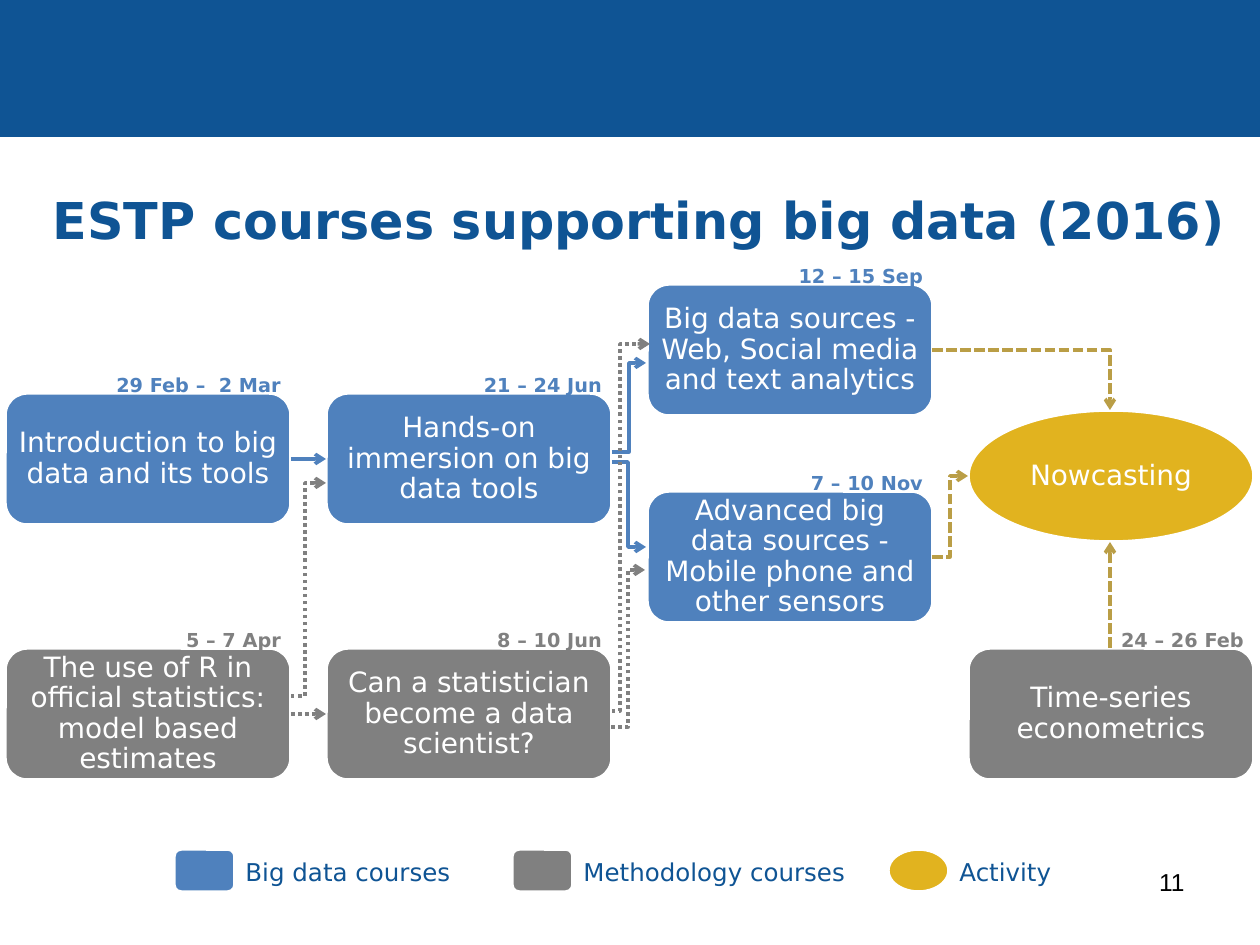
from lxml import etree
from pptx import Presentation
from pptx import util as u
from pptx.dml.color import RGBColor
from pptx.enum import dml, shapes, text
from pptx.oxml import ns

NAVY = RGBColor(0x0F, 0x54, 0x94)
BLUE = RGBColor(0x4F, 0x81, 0xBD)
GREY = RGBColor(0x80, 0x80, 0x80)
GOLD = RGBColor(0xE1, 0xB3, 0x1F)
DARK_GOLD = RGBColor(0xBA, 0x9E, 0x46)
WHITE = RGBColor(0xFF, 0xFF, 0xFF)
BLACK = RGBColor(0, 0, 0)

FONT = "DejaVu Sans"
PX_PER_INCH = 126
ROUNDED = shapes.MSO_SHAPE.ROUNDED_RECTANGLE
OVAL = shapes.MSO_SHAPE.OVAL
SOLID = dml.MSO_LINE.SOLID
DOTTED = dml.MSO_LINE.ROUND_DOT
DASHED = dml.MSO_LINE.SQUARE_DOT
ALIGN = text.PP_ALIGN

BOX_WIDTH, BOX_HEIGHT = 286, 132
FIRST_COLUMN, COLUMN_STEP = 5, 321

# column, top, kind, colour, name, dates, width of the dates
STEPS = [
    (0, 393, ROUNDED, BLUE, "Introduction to big data and its tools", "29 Feb –  2 Mar", 207),
    (1, 393, ROUNDED, BLUE, "Hands-on immersion on big data tools", "21 – 24 Jun", 167),
    (2, 284, ROUNDED, BLUE, "Big data sources - Web, Social media and text analytics",
     "12 – 15 Sep", 167),
    (2, 491, ROUNDED, BLUE, "Advanced big data sources - Mobile phone and other sensors",
     "7 – 10 Nov", 167),
    (0, 648, ROUNDED, GREY, "The use of R in official statistics: model based estimates",
     "5 – 7 Apr", 167),
    (1, 648, ROUNDED, GREY, "Can a statistician become a data scientist?", "8 – 10 Jun", 167),
    (3, 648, ROUNDED, GREY, "Time-series econometrics", "24 – 26 Feb", 167),
    (3, 410, OVAL, GOLD, "Nowcasting", None, 0),
]

# start, x of the turn (None for a straight arrow), end, colour, dash
ARROWS = [
    ((291, 459), None, (326, 459), BLUE, SOLID),
    ((612, 462), 628, (646, 547), BLUE, SOLID),
    ((612, 452), 629, (646, 363), BLUE, SOLID),
    ((291, 696), 305, (326, 483), GREY, DOTTED),
    ((291, 714), None, (326, 714), GREY, DOTTED),
    ((612, 711), 620, (650, 344), GREY, DOTTED),
    ((611, 727), 628, (645, 570), GREY, DOTTED),
    ((932, 350), 1110, (1110, 410), DARK_GOLD, DASHED),
    ((932, 557), 950, (968, 476), DARK_GOLD, DASHED),
    ((1110, 648), None, (1110, 542), DARK_GOLD, DASHED),
]

# left, kind, colour, label, label width
LEGEND = [
    (174, ROUNDED, BLUE, "Big data courses", 232),
    (512, ROUNDED, GREY, "Methodology courses", 287),
    (888, OVAL, GOLD, "Activity", 117),
]


def px(*lengths):
    return [u.Emu(round(length * 914400 / PX_PER_INCH)) for length in lengths]


def write(shape, words, size, colour, align, bold=False, font=FONT, spacing=None):
    frame = shape.text_frame
    frame.text = words
    para = frame.paragraphs[0]
    para.alignment = align
    para.line_spacing = spacing
    style = para.runs[0].font
    style.name, style.size, style.bold = font, u.Pt(size), bold
    style.color.rgb = colour
    return frame


def set_margins(frame, left, top, right, bottom):
    (frame.margin_left, frame.margin_top,
     frame.margin_right, frame.margin_bottom) = px(left, top, right, bottom)
    frame.vertical_anchor = text.MSO_ANCHOR.MIDDLE
    frame.word_wrap = True


def add_block(page, kind, box, fill, line=WHITE, weight=2):
    block = page.shapes.add_shape(kind, *px(*box))
    block.shadow.inherit = False
    block.fill.solid()
    block.fill.fore_color.rgb = fill
    block.line.color.rgb = line
    block.line.width = u.Pt(weight)
    return block


def add_header(page):
    add_block(page, shapes.MSO_SHAPE.RECTANGLE, (0, 0, 1260, 136), NAVY, NAVY, 0.75)
    title = page.shapes.title
    title.left, title.top, title.width, title.height = px(25, 155, 1229, 129)
    frame = write(title, "ESTP courses supporting big data (2016)", 29, NAVY,
                  ALIGN.CENTER, bold=True)
    frame.vertical_anchor = text.MSO_ANCHOR.MIDDLE
    frame.auto_size = text.MSO_AUTO_SIZE.NONE


def add_step(page, column, top, kind, colour, name, dates, dates_width):
    """Add a course or activity, with its dates over the top right corner."""
    left = FIRST_COLUMN + column * COLUMN_STEP
    block = add_block(page, kind, (left, top, BOX_WIDTH, BOX_HEIGHT), colour)
    set_margins(write(block, name, 16, WHITE, ALIGN.CENTER, spacing=0.9), 6, 6, 6, 6)
    if dates:
        right = left + BOX_WIDTH
        label = page.shapes.add_textbox(*px(right - dates_width, top - 20, dates_width, 26))
        frame = write(label, dates, 11, colour, ALIGN.RIGHT, bold=True, spacing=0.9)
        set_margins(frame, 0, 0, 10, 0)


def add_arrow(page, start, turn, end, colour, dash):
    """Add an arrow that is straight, or that turns at a given x."""
    kind = shapes.MSO_CONNECTOR.STRAIGHT if turn is None else shapes.MSO_CONNECTOR.ELBOW
    arrow = page.shapes.add_connector(kind, *px(*start, *end))
    arrow.line.color.rgb = colour
    arrow.line.width = u.Pt(2)
    arrow.line.dash_style = dash
    properties = arrow.element.spPr
    etree.SubElement(properties.find(ns.qn("a:ln")), ns.qn("a:tailEnd"), type="arrow")
    etree.SubElement(properties, ns.qn("a:effectLst"))
    geometry = properties.find(ns.qn("a:prstGeom"))
    if turn == end[0]:
        geometry.set("prst", "bentConnector2")
    elif turn is not None:
        share = round(100000 * (turn - start[0]) / (end[0] - start[0]))
        guides = geometry.find(ns.qn("a:avLst"))
        etree.SubElement(guides, ns.qn("a:gd"), name="adj1", fmla=f"val {share}")


def add_legend_entry(page, left, kind, colour, name, width, top=849):
    add_block(page, kind, (left, top, 61, 43), colour)
    label = page.shapes.add_textbox(*px(left + 59, top + 2, width, 43))
    write(label, name, 14, NAVY, ALIGN.LEFT).word_wrap = False


def add_page_number(page, number):
    label = page.shapes.add_textbox(*px(903, 861, 294, 65))
    write(label, number, 14, BLACK, ALIGN.RIGHT, font="Arial").word_wrap = True


def main():
    deck = Presentation()
    deck.slide_width, deck.slide_height = px(1260, 945)
    page = deck.slides.add_slide(deck.slide_layouts.get_by_name("Title Only"))
    add_header(page)
    for step in STEPS:
        add_step(page, *step)
    for arrow in ARROWS:
        add_arrow(page, *arrow)
    for entry in LEGEND:
        add_legend_entry(page, *entry)
    add_page_number(page, "11")
    deck.save("out.pptx")


if __name__ == "__main__":
    main()
